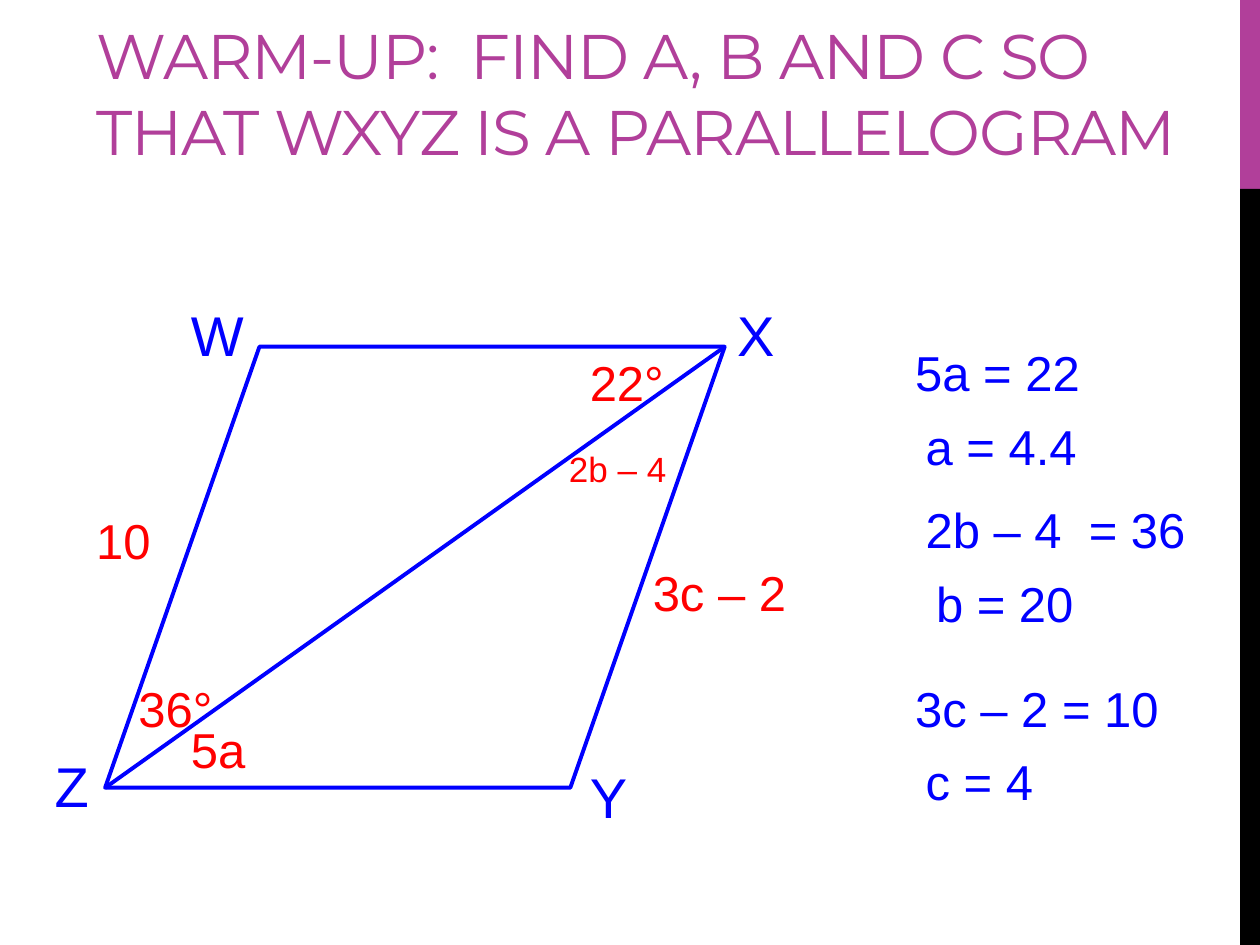
from lxml.etree import SubElement
from pptx import Presentation
from pptx.dml.color import RGBColor
from pptx.enum.shapes import MSO_CONNECTOR, MSO_SHAPE
from pptx.enum.text import MSO_ANCHOR, MSO_AUTO_SIZE, PP_ALIGN
from pptx.oxml.ns import qn
from pptx.util import Cm, Pt

HUES = {"plum": "B13F9A", "black": "000000", "blue": "0000FF", "red": "FF0000"}
TITLE = "WARM-UP:  FIND A, B AND C SO THAT WXYZ IS A PARALLELOGRAM"
BARS = [("plum", 0, 3.81), ("black", 3.81, 15.24)]
LEFT, TOP, WIDE, HIGH = 2.12, 6.99, 12.49, 8.89
NAMES = [("W", 3.6, 5.93), ("X", 14.61, 5.93), ("Y", 11.64, 15.24), ("Z", 0.85, 15.03)]
MARKS = [
    ("36°", 2.54, 13.55, 2.12, 28),
    ("22°", 11.64, 6.99, 2.12, 28),
    ("5a", 3.6, 14.39, 2.12, 28),
    ("2b – 4", 11.22, 8.89, 4.02, 20),
    ("10", 1.69, 10.16, 2.12, 28),
    ("3c – 2", 12.91, 11.22, 3.6, 28),
]
STEPS = [
    (18.2, 6.79, ["5a = 22", "a = 4.4"]),
    (18.41, 9.95, ["2b – 4  = 36", "b = 20"]),
    (18.2, 13.55, ["3c – 2 = 10", "c = 4"]),
]
INDENT, DROP = 0.21, 1.48
TALL = {32: 1.6, 28: 1.45, 20: 1.09}


def tint(hue):
    return RGBColor.from_string(HUES[hue])


def style(frame, text, size=28, hue="blue", face="Arial"):
    frame.word_wrap = True
    par = frame.paragraphs[0]
    par.alignment = PP_ALIGN.LEFT
    run = par.add_run()
    run.text = text
    run.font.size = Pt(size)
    run.font.name = face
    run.font.color.rgb = tint(hue)
    return par, run


def label(text, x, y, wide, **form):
    tall = TALL[form.get("size", 28)]
    box = slide.shapes.add_textbox(Cm(x), Cm(y), Cm(wide), Cm(tall))
    par, run = style(box.text_frame, text, **form)
    box.text_frame.auto_size = MSO_AUTO_SIZE.SHAPE_TO_FIT_TEXT
    gap = SubElement(par._p.get_or_add_pPr(), qn("a:spcBef"))
    SubElement(gap, qn("a:spcPct")).set("val", "50000")


def stroke(shape):
    shape.line.color.rgb = tint("blue")
    shape.line.width = Pt(2.25)


deck = Presentation()
deck.slide_width, deck.slide_height = Cm(25.4), Cm(19.05)
slide = deck.slides.add_slide(deck.slide_layouts[5])

for hue, y, tall in BARS:
    bar = slide.shapes.add_shape(MSO_SHAPE.RECTANGLE, Cm(25), Cm(y), Cm(0.4), Cm(tall))
    bar.shadow.inherit = False
    bar.fill.solid()
    bar.fill.fore_color.rgb = tint(hue)
    bar.line.fill.background()

title = slide.shapes.title
title.left, title.top, title.width, title.height = Cm(1.69), Cm(0.64), Cm(22.66), Cm(2.75)
frame = title.text_frame
frame.auto_size = MSO_AUTO_SIZE.NONE
frame.vertical_anchor = MSO_ANCHOR.BOTTOM
frame.margin_bottom = Cm(0)
par, run = style(frame, TITLE, size=36, hue="plum", face="Montserrat")
run.font._element.set("spc", "-60")

shape = slide.shapes.add_shape(
    MSO_SHAPE.PARALLELOGRAM, Cm(LEFT), Cm(TOP), Cm(WIDE), Cm(HIGH))
shape.adjustments[0] = 0.35
shape.shadow.inherit = False
shape.fill.background()
stroke(shape)

line = slide.shapes.add_connector(
    MSO_CONNECTOR.STRAIGHT, Cm(LEFT), Cm(TOP + HIGH), Cm(LEFT + WIDE), Cm(TOP))
stroke(line)
SubElement(line._element.spPr, qn("a:effectLst"))

for text, x, y in NAMES:
    label(text, x, y, 1.27, size=32)
for text, x, y, wide, size in MARKS:
    label(text, x, y, wide, size=size, hue="red")
for x, y, pair in STEPS:
    for row, text in enumerate(pair):
        label(text, x + row * INDENT, y + row * DROP, 5.93)

deck.save("out.pptx")
